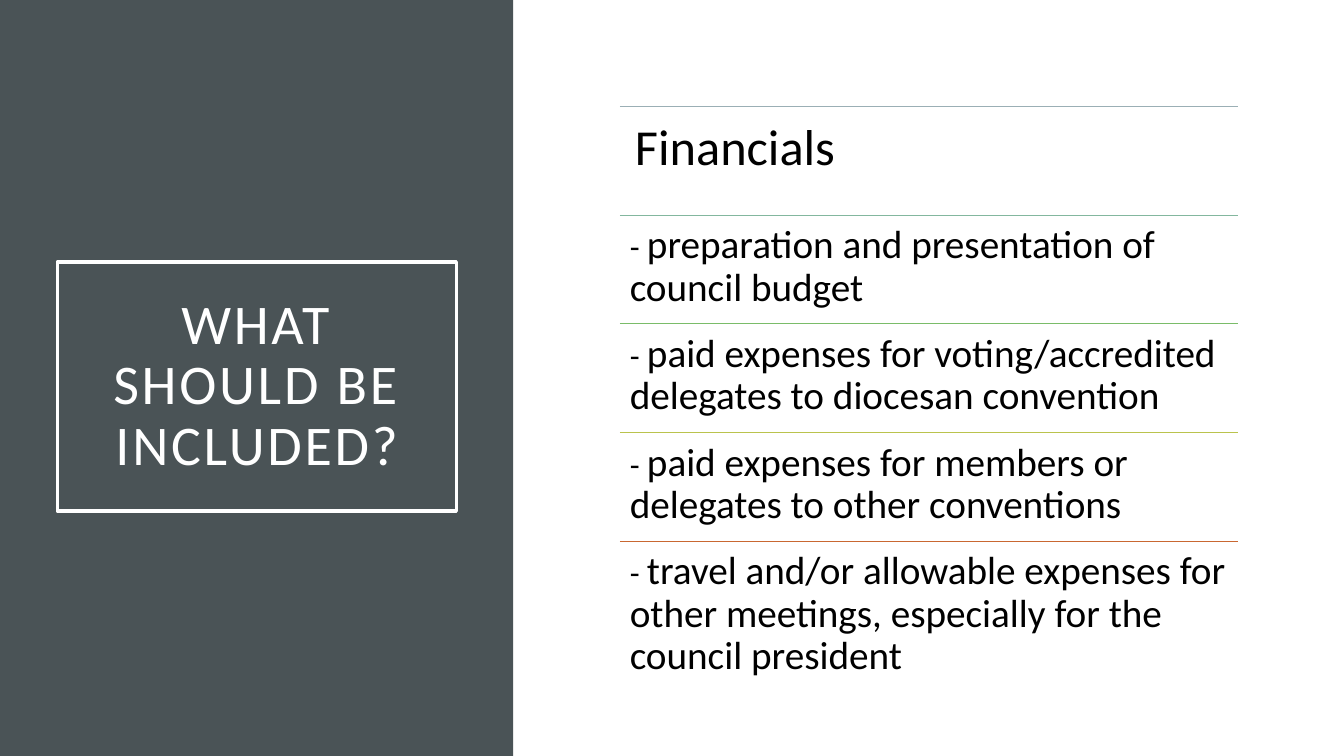
import pptx
import pptx.dml.color
import pptx.enum.shapes
import pptx.enum.text
import pptx.oxml.ns
import pptx.util
from lxml import etree

Pt = pptx.util.Pt
FONT = "Calibri"
COLORS = {"panel": "4A5356", "white": "FFFFFF", "text": "000000"}
HEADING = "Financials"
# Rule colour and text of each row below the heading
HEADING_RULE = "9BAFB5"
ITEMS = [
    ("83B79E", "preparation and presentation of council budget"),
    ("7ABC69", "paid expenses for voting/accredited delegates to diocesan convention"),
    ("BAC34D", "paid expenses for members or delegates to other conventions"),
    ("C96731", "travel and/or allowable expenses for other meetings, "
               "especially for the council president"),
]


def rgb(value):
    return pptx.dml.color.RGBColor.from_string(value)


def prepare_text(shape, margin, anchor):
    frame = shape.text_frame
    frame.word_wrap = True
    frame.vertical_anchor = anchor
    frame.margin_left = frame.margin_right = Pt(margin)
    frame.margin_top = frame.margin_bottom = Pt(margin)
    paragraph = frame.paragraphs[0]
    paragraph.line_spacing = 0.9
    return paragraph


def add_run(paragraph, text, size, color):
    run = paragraph.add_run()
    run.text = text
    run.font.name = FONT
    run.font.size = Pt(size)
    run.font.color.rgb = rgb(color)
    return run


def add_rectangle(slide, left, top, width, height):
    shape = slide.shapes.add_shape(
        pptx.enum.shapes.MSO_SHAPE.RECTANGLE, Pt(left), Pt(top), Pt(width), Pt(height))
    shape.shadow.inherit = False
    return shape


def add_title_panel(slide, left, top, width, height):
    # Dark side panel
    panel = add_rectangle(slide, left, top, width, height)
    panel.fill.solid()
    panel.fill.fore_color.rgb = rgb(COLORS["panel"])
    panel.line.fill.background()

    # Framed title
    frame = add_rectangle(slide, left + 41, top + 187.2, width - 81.5, 177.8)
    frame.fill.background()
    frame.line.color.rgb = rgb(COLORS["white"])
    frame.line.width = Pt(2.5)
    paragraph = prepare_text(frame, 14.4, pptx.enum.text.MSO_ANCHOR.MIDDLE)
    paragraph.alignment = pptx.enum.text.PP_ALIGN.CENTER
    run = add_run(paragraph, "WHAT SHOULD BE INCLUDED?", 40, COLORS["white"])
    run.font._element.set("spc", "200")


def add_row(slide, left, top, width, height, rule_color, margin, runs):
    # Rule above the row
    rule = slide.shapes.add_connector(
        pptx.enum.shapes.MSO_CONNECTOR.STRAIGHT, Pt(left), Pt(top), Pt(left + width), Pt(top))
    rule.line.color.rgb = rgb(rule_color)
    rule.line.width = Pt(0.5)
    etree.SubElement(rule._element.spPr, pptx.oxml.ns.qn("a:effectLst"))

    # Row text
    box = slide.shapes.add_textbox(Pt(left), Pt(top), Pt(width), Pt(height))
    paragraph = prepare_text(box, margin, pptx.enum.text.MSO_ANCHOR.TOP)
    for text, size in runs:
        add_run(paragraph, text, size, COLORS["text"])


def add_list(slide, left, top, width, height):
    row_height = height / (len(ITEMS) + 1)
    add_row(slide, left, top, width, row_height, HEADING_RULE, 10.8, [(HEADING, 36)])
    for index, (rule_color, text) in enumerate(ITEMS, start=1):
        add_row(slide, left, top + index * row_height, width, row_height,
                rule_color, 7.2, [("- ", 23), (text, 28)])


def main():
    presentation = pptx.Presentation()
    presentation.slide_width = Pt(960)
    presentation.slide_height = Pt(540)
    slide = presentation.slides.add_slide(presentation.slide_layouts[6])
    add_title_panel(slide, 0, 0, 366.5, 540)
    add_list(slide, 442.8, 76, 441.4, 388)
    presentation.save("out.pptx")


if __name__ == "__main__":
    main()
